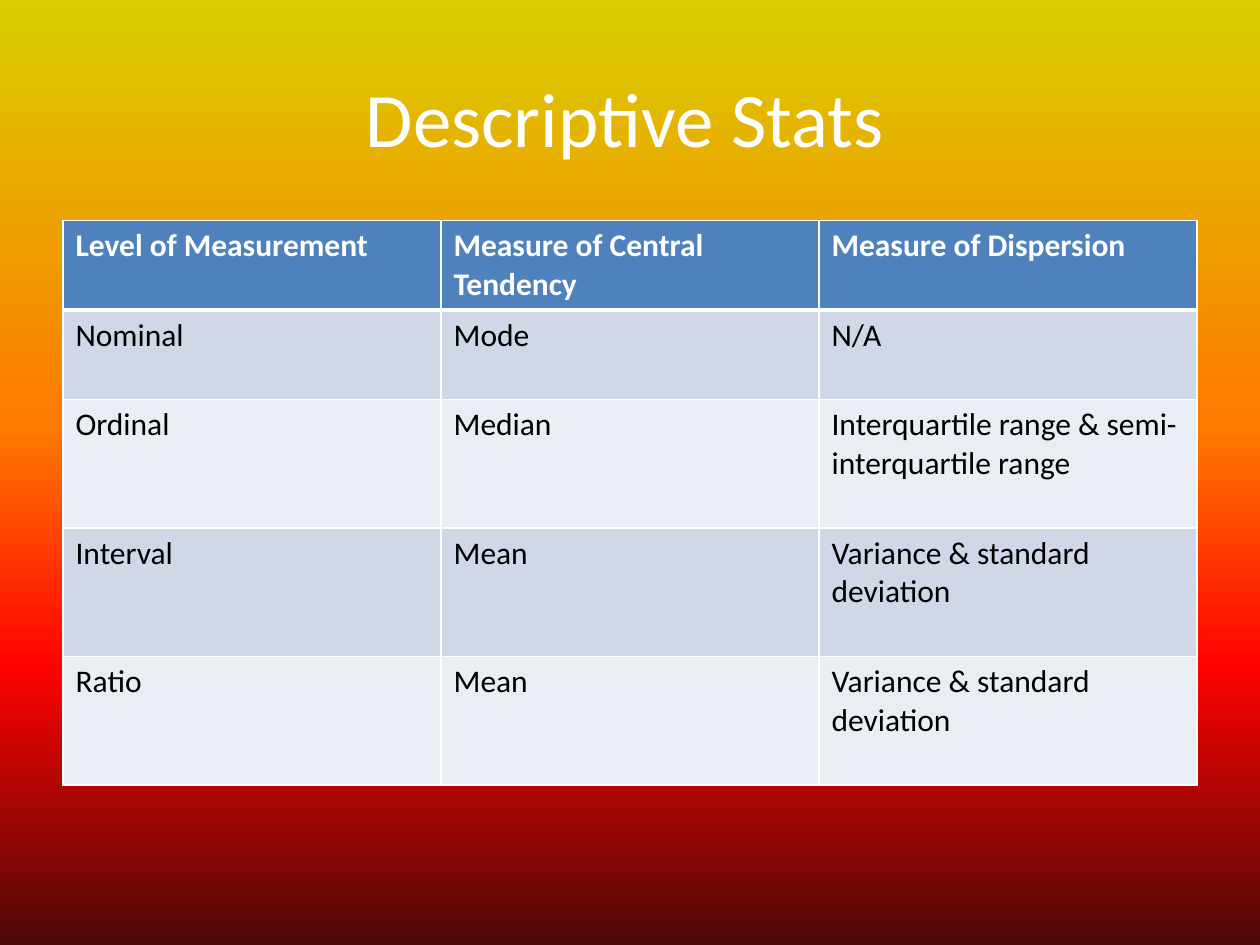
from lxml.etree import SubElement
from pptx import Presentation
from pptx.dml.color import RGBColor
from pptx.enum.text import MSO_ANCHOR, PP_ALIGN
from pptx.oxml.ns import qn
from pptx.util import Inches, Pt

TITLE = "Descriptive Stats"
ROWS = [
    ("Level of Measurement", "Measure of Central Tendency", "Measure of Dispersion"),
    ("Nominal", "Mode", "N/A"),
    ("Ordinal", "Median", "Interquartile range & semi-interquartile range"),
    ("Interval", "Mean", "Variance & standard deviation"),
    ("Ratio", "Mean", "Variance & standard deviation"),
]
ROW_HEIGHTS = [0.71, 0.71, 1.02, 1.02, 1.02]
THEME = {
    "font": "Calibri",
    "title_size": 44,
    "table_size": 18,
    "light": "FFFFFF",
    "dark": "000000",
    "header": "4F81BD",
    "bands": ("D0D8E8", "E9EDF4"),
    "border": 1,
    "header_border": 3,
    "background": [(0, "D9CE00"), (45, "FF7A00"), (70, "FF0300"), (100, "4D0808")],
}
WIDTH, HEIGHT = 10, 7.5
MARGIN = WIDTH * 0.05
TABLE_TOP = 1.75


def paint_background(slide):
    fill = slide.background.fill
    fill.gradient()
    fill.gradient_angle = 270
    stop_list = slide.element.find(".//" + qn("a:gsLst"))
    for stop in list(stop_list):
        stop_list.remove(stop)
    for position, color in THEME["background"]:
        stop = SubElement(stop_list, qn("a:gs"), pos=str(position * 1000))
        SubElement(stop, qn("a:srgbClr"), val=color)


def style_text(paragraph, size, color, bold=False):
    font = paragraph.font
    font.name = THEME["font"]
    font.size = Pt(size)
    font.bold = bold
    font.color.rgb = RGBColor.from_string(color)


def add_title(slide):
    box = slide.shapes.add_textbox(0, Inches(0.3), Inches(9.92), Inches(1.25))
    frame = box.text_frame
    frame.word_wrap = True
    frame.vertical_anchor = MSO_ANCHOR.MIDDLE
    paragraph = frame.paragraphs[0]
    paragraph.text = TITLE
    paragraph.alignment = PP_ALIGN.CENTER
    style_text(paragraph, THEME["title_size"], THEME["light"])


def add_borders(cell, row_index):
    heavy_side = {0: "lnB", 1: "lnT"}.get(row_index)
    properties = cell._tc.get_or_add_tcPr()
    for side in ("lnL", "lnR", "lnT", "lnB"):
        points = THEME["header_border" if side == heavy_side else "border"]
        line = SubElement(properties, qn("a:" + side), w=str(Pt(points)))
        SubElement(SubElement(line, qn("a:solidFill")), qn("a:srgbClr"), val=THEME["light"])


def add_measures_table(slide):
    frame = slide.shapes.add_table(
        len(ROWS), len(ROWS[0]), Inches(MARGIN), Inches(TABLE_TOP),
        Inches(WIDTH - 2 * MARGIN), Inches(sum(ROW_HEIGHTS)),
    )
    table = frame.table
    for row_index, (texts, height) in enumerate(zip(ROWS, ROW_HEIGHTS)):
        table.rows[row_index].height = Inches(height)
        is_header = row_index == 0
        fill = THEME["header"] if is_header else THEME["bands"][(row_index - 1) % 2]
        color = THEME["light" if is_header else "dark"]
        for column_index, text in enumerate(texts):
            cell = table.cell(row_index, column_index)
            cell.text = text
            style_text(cell.text_frame.paragraphs[0], THEME["table_size"], color, is_header)
            add_borders(cell, row_index)
            cell.fill.solid()
            cell.fill.fore_color.rgb = RGBColor.from_string(fill)


def main():
    presentation = Presentation()
    presentation.slide_width = Inches(WIDTH)
    presentation.slide_height = Inches(HEIGHT)
    slide = presentation.slides.add_slide(presentation.slide_layouts[6])
    paint_background(slide)
    add_title(slide)
    add_measures_table(slide)
    presentation.save("out.pptx")


if __name__ == "__main__":
    main()
